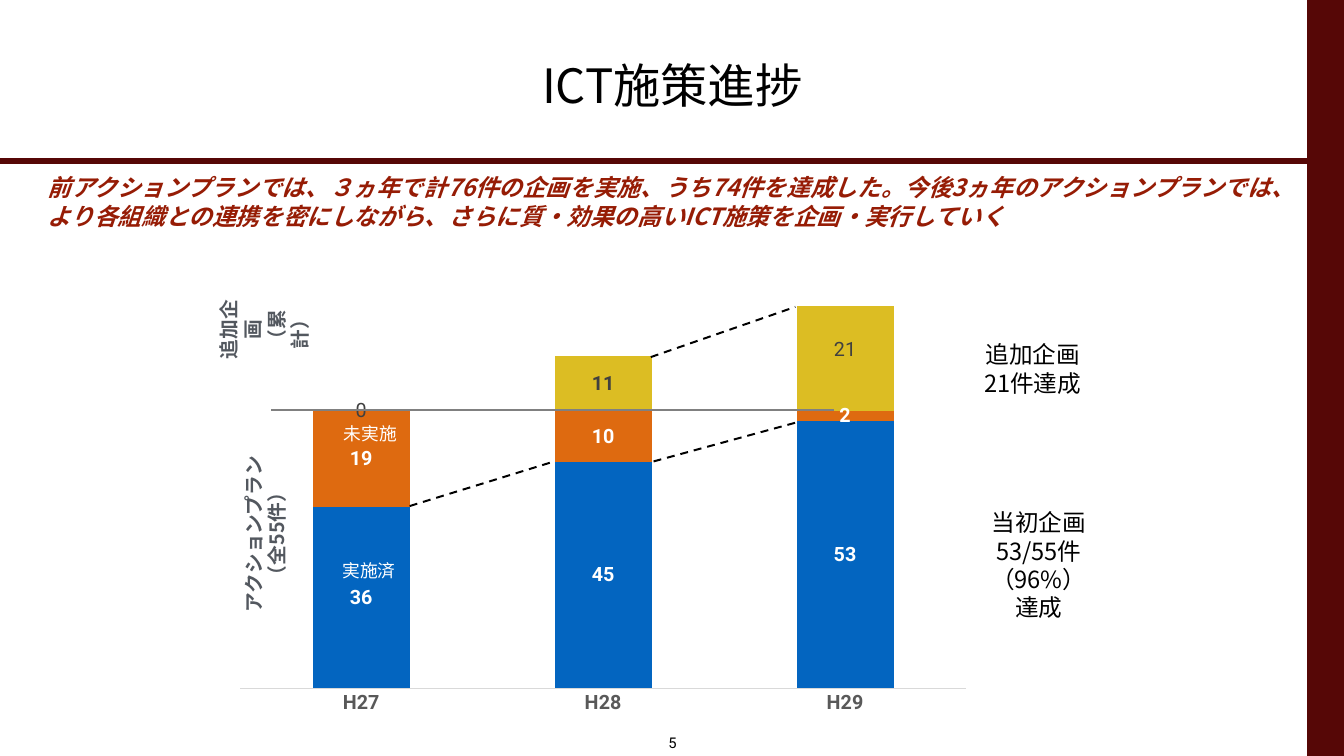
from lxml import etree
from pptx import Presentation
from pptx.chart.data import CategoryChartData
from pptx.dml.color import RGBColor
from pptx.enum.chart import XL_CHART_TYPE, XL_TICK_MARK
from pptx.enum.dml import MSO_LINE
from pptx.enum.shapes import MSO_CONNECTOR, MSO_SHAPE
from pptx.enum.text import MSO_ANCHOR, PP_ALIGN
from pptx.oxml.ns import qn
from pptx.util import Cm, Pt

STACKED = XL_CHART_TYPE.COLUMN_STACKED
NO_TICK = XL_TICK_MARK.NONE
DASH = MSO_LINE.DASH
STRAIGHT = MSO_CONNECTOR.STRAIGHT
RECTANGLE = MSO_SHAPE.RECTANGLE
TOP, MIDDLE = MSO_ANCHOR.TOP, MSO_ANCHOR.MIDDLE
LEFT, CENTER = PP_ALIGN.LEFT, PP_ALIGN.CENTER

JAPANESE, LATIN = "Noto Sans CJK JP", "Roboto"
COLORS = {
    "maroon": "560706", "black": "000000", "white": "FFFFFF",
    "red": "961C05", "slate": "53585F", "grey": "808080",
    "axis": "D9D9D9", "category": "595959", "label": "404040",
    "done": "0365C0", "open": "DE6A10", "added": "DCBD23",
}


def color(name):
    """Return the named colour."""
    return RGBColor.from_string(COLORS[name])


def style_font(font, size, tone, bold=False, name=LATIN):
    """Format a font."""
    font.name, font.size, font.bold = name, Pt(size), bold
    font.color.rgb = color(tone)


def add_layout(parent, index, **values):
    """Give a chart part a manual layout."""
    for old in parent.findall(qn("c:layout")):
        parent.remove(old)
    layout = etree.Element(qn("c:layout"))
    manual = etree.SubElement(layout, qn("c:manualLayout"))
    for tag, value in values.items():
        etree.SubElement(manual, qn(f"c:{tag}")).set("val", str(value))
    parent.insert(index, layout)


class ProgressSlide:
    """Hold the style and the current slide."""

    def __init__(self, deck):
        """Add a slide with a title placeholder."""
        self.slide = deck.slides.add_slide(deck.slide_layouts[5])
        self.shapes = self.slide.shapes

    def fill_frame(self, frame, paragraphs, size, tone, align=CENTER, anchor=MIDDLE,
                   bold=False, italic=False, font=JAPANESE, wrap=False):
        """Fill a text frame, breaking lines inside a paragraph at newlines."""
        frame.word_wrap, frame.vertical_anchor = wrap, anchor
        frame.margin_left = frame.margin_right = Cm(0.15)
        frame.margin_top = frame.margin_bottom = Cm(0.15)
        for number, text in enumerate(paragraphs):
            paragraph = frame.add_paragraph() if number else frame.paragraphs[0]
            paragraph.alignment = align
            for row, line in enumerate(text.split("\n")):
                if row:
                    paragraph.add_line_break()
                run = paragraph.add_run()
                run.text = line
                style_font(run.font, size, tone, bold, font)
                run.font.italic = italic
                latin = run.font._element.find(qn("a:latin"))
                east_asian = etree.Element(qn("a:ea"), typeface=font)
                latin.addnext(east_asian)

    def title(self, box, text):
        """Place and fill the title placeholder."""
        title = self.shapes.title
        title.left, title.top, title.width, title.height = map(Cm, box)
        self.fill_frame(title.text_frame, [text], 48, "black", wrap=True)

    def text(self, box, paragraphs, size, tone, rotation=0, **style):
        """Add a text box."""
        label = self.shapes.add_textbox(*map(Cm, box))
        label.rotation = rotation
        self.fill_frame(label.text_frame, paragraphs, size, tone, **style)

    def band(self, box, tone):
        """Add a plain filled rectangle."""
        band = self.shapes.add_shape(RECTANGLE, *map(Cm, box))
        band.shadow.inherit = False
        band.fill.solid()
        band.fill.fore_color.rgb = color(tone)
        band.line.fill.background()

    def line(self, ends, tone, width, dash=None):
        """Add a straight line."""
        line = self.shapes.add_connector(STRAIGHT, *map(Cm, ends))
        line.line.color.rgb = color(tone)
        line.line.width = Pt(width)
        if dash:
            line.line.dash_style = dash
        etree.SubElement(line._element.spPr, qn("a:effectLst"))

    def chart(self, box, years, plans):
        """Add the stacked column chart."""
        data = CategoryChartData()
        data.categories = years
        for name, values, *_ in plans:
            data.add_series(name, values)
        chart = self.shapes.add_chart(STACKED, *map(Cm, box), data).chart
        chart.has_legend = chart.has_title = False
        style_font(chart.font, 10, "black")
        plot = chart.plots[0]
        plot.gap_width, plot.overlap, plot.vary_by_categories = 150, 100, False
        years_axis, count_axis = chart.category_axis, chart.value_axis
        years_axis.major_tick_mark = years_axis.minor_tick_mark = NO_TICK
        style_font(years_axis.tick_labels.font, 20, "category", True)
        years_axis.format.line.color.rgb = color("axis")
        years_axis.format.line.width = Pt(0.75)
        count_axis.minimum_scale, count_axis.maximum_scale = 0, 80
        count_axis.has_major_gridlines = count_axis.visible = False
        for series, (_, _, fill, tone, bold) in zip(plot.series, plans):
            series.format.fill.solid()
            series.format.fill.fore_color.rgb = color(fill)
            series.data_labels.show_value = True
            style_font(series.data_labels.font, 20, tone, bold)
        self.label_added(plot.series[2], plot.series[3])
        add_layout(chart._chartSpace.chart.plotArea, 0, layoutTarget="inner",
                   xMode="edge", yMode="edge", x=0.016, y=0.057, w=0.967, h=0.853)

    def label_added(self, earlier, latest):
        """Label the added plans, with one total for the last year."""
        style_font(earlier.points[1].data_label.font, 20, "label", True)
        style_font(earlier.points[2].data_label.font, 20, "label")
        unlabelled = earlier._element.findall(f".//{qn('c:dLbl')}")[-1]
        unlabelled.find(qn("c:showVal")).set("val", "0")
        total = latest.points[2].data_label.text_frame.paragraphs[0].add_run()
        total.text = "21"
        style_font(total.font, 20, "label")
        add_layout(latest._element.find(f".//{qn('c:dLbl')}"), 1, x=0, y=0.04)


def main():
    """Build the deck."""
    deck = Presentation()
    deck.slide_width, deck.slide_height = Cm(48.16), Cm(27.1)
    page = ProgressSlide(deck)
    page.band((46.84, 0, 1.32, 27.1), "maroon")
    page.line((0, 5.77, 46.84, 5.77), "maroon", 6)
    page.title((3.53, 0.03, 41.12, 6), "ICT施策進捗")
    page.chart((8.18, 9.27, 26.9, 16.92), ["H27", "H28", "H29"], [
        ("実施済", (36, 45, 53), "done", "white", True),
        ("未実施", (19, 10, 2), "open", "white", True),
        ("追加企画", (0, 11, 11), "added", "label", False),
        ("追加企画（H29）", (None, None, 10), "added", "label", False),
    ])
    page.text((12.12, 19.91, 2.21, 1.07), ["実施済"], 18, "white")
    page.text((12.17, 14.99, 2.21, 1.07), ["未実施"], 18, "white")
    for trend in ((14.68, 18.14, 19.86, 16.54), (23.42, 16.54, 28.55, 15.14),
                  (23.32, 12.8, 28.5, 11)):
        page.line(trend, "black", 2, DASH)
    page.line((29.87, 14.71, 9.7, 14.71), "grey", 2)
    page.text((1.55, 6.05, 44.55, 2.34), [
        "前アクションプランでは、３ヵ年で計76件の企画を実施、うち74件を達成した。"
        "今後3ヵ年のアクションプランでは、より各組織との連携を密にしながら、"
        "さらに質・効果の高いICT施策を企画・実行していく",
    ], 24, "red", align=LEFT, bold=True, italic=True, wrap=True)
    page.text((6.5, 18.14, 6, 2), ["アクションプラン\n（全55件）"], 20, "slate", 270, bold=True)
    page.text((7.92, 10.82, 3.12, 2), ["追加企画\n（累計）"], 20, "slate", 270, bold=True)
    page.text((35.22, 18.57, 4, 3.35), ["当初企画", "53/55件（96%）\n達成"], 24, "black", wrap=True)
    page.text((35.05, 12.04, 3.91, 2.34), ["追加企画", "21件達成"], 24, "black", wrap=True)
    page.text((23.55, 26.16, 1.09, 0.91), ["5"], 15, "black", anchor=TOP, font=LATIN)
    deck.save("out.pptx")


if __name__ == "__main__":
    main()
